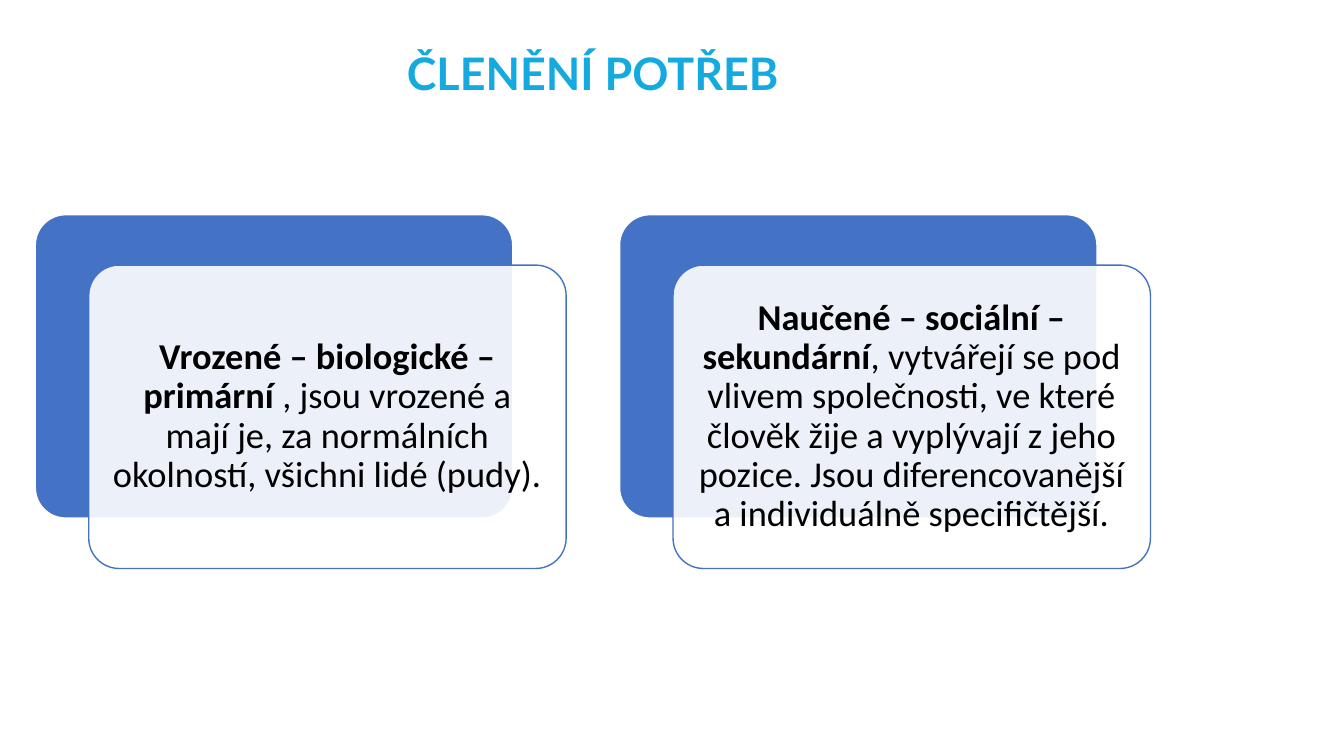
from dataclasses import dataclass

from lxml import etree
from pptx import Presentation, util as u
from pptx.dml.color import RGBColor
from pptx.enum import shapes, text
from pptx.oxml.ns import qn


@dataclass(frozen=True)
class Theme:
    """Colours, fonts and type sizes of the slide."""
    blue: RGBColor = RGBColor(0x44, 0x72, 0xC4)
    cyan: RGBColor = RGBColor(0x14, 0xAA, 0xE0)
    white: RGBColor = RGBColor(255, 255, 255)
    black: RGBColor = RGBColor(0, 0, 0)
    head: str = "Lato"
    body: str = "Calibri"
    big: int = 32
    mid: int = 26


THEME = Theme()
WIDE, HIGH = u.Inches(13.33), u.Inches(7.5)
LEFT, SPAN = 0.35, 11.06
GAP = 0.53
NEEDS = [
    ("Vrozené – biologické – primární",
     " , jsou vrozené a mají je, za normálních okolností, všichni lidé (pudy)."),
    ("Naučené – sociální – sekundární",
     ", vytvářejí se pod vlivem společnosti, ve které člověk žije a vyplývají "
     "z jeho pozice. Jsou diferencovanější a individuálně specifičtější."),
]


def style(par, face, size, tint):
    """Centre a paragraph and set its font."""
    par.alignment = text.PP_ALIGN.CENTER
    par.line_spacing = 0.9
    par.font.name, par.font.size = face, u.Pt(size)
    par.font.color.rgb = tint


def title(slide, box, words):
    """Place the slide title in the given box."""
    head = slide.shapes.title
    head.left, head.top, head.width, head.height = map(u.Inches, box)
    frame = head.text_frame
    frame.text = words
    frame.vertical_anchor = text.MSO_ANCHOR.MIDDLE
    style(frame.paragraphs[0], THEME.head, THEME.big, THEME.cyan)
    frame.paragraphs[0].font.bold = True


def panel(slide, box, fill, line):
    """Draw a rounded panel and return it."""
    form = slide.shapes.add_shape(
        shapes.MSO_SHAPE.ROUNDED_RECTANGLE, *map(u.Inches, box))
    form.adjustments[0] = 0.1
    form.shadow.inherit = False
    form.fill.solid()
    form.fill.fore_color.rgb = fill
    form.line.color.rgb = line
    form.line.width = u.Pt(1)
    return form


def card(slide, box, term, note):
    """Draw a blue panel with an offset, translucent text panel over it."""
    x, y, w, h = box
    dx, dy = GAP, 0.5
    w, h = w - dx, h - dy
    panel(slide, (x, y, w, h), THEME.blue, THEME.white)
    front = panel(slide, (x + dx, y + dy, w, h), THEME.white, THEME.blue)
    tint = front.fill._xPr.find(qn("a:solidFill"))[0]
    etree.SubElement(tint, qn("a:alpha"), val="90000")
    frame = front.text_frame
    frame.word_wrap = True
    frame.vertical_anchor = text.MSO_ANCHOR.MIDDLE
    frame.margin_left = frame.margin_right = u.Inches(0.11)
    frame.margin_top = frame.margin_bottom = u.Inches(0.11)
    par = frame.paragraphs[0]
    for words, bold in ((term, True), (note, False)):
        run = par.add_run()
        run.text, run.font.bold = words, bold
    style(par, THEME.body, THEME.mid, THEME.black)


def cards(slide, box, needs):
    """Share the box among equal columns, one card each."""
    x, y, w, h = box
    wide = (w - GAP * (len(needs) - 1)) / len(needs)
    for col, (term, note) in enumerate(needs):
        card(slide, (x + col * (wide + GAP), y, wide, h), term, note)


def main():
    """Build and save the slide."""
    deck = Presentation()
    deck.slide_width, deck.slide_height = WIDE, HIGH
    slide = deck.slides.add_slide(deck.slide_layouts[5])
    title(slide, (LEFT, 0.4, SPAN, 0.71), "ČLENĚNÍ POTŘEB")
    cards(slide, (LEFT, 2.13, SPAN, 3.51), NEEDS)
    deck.save("out.pptx")


if __name__ == "__main__":
    main()
